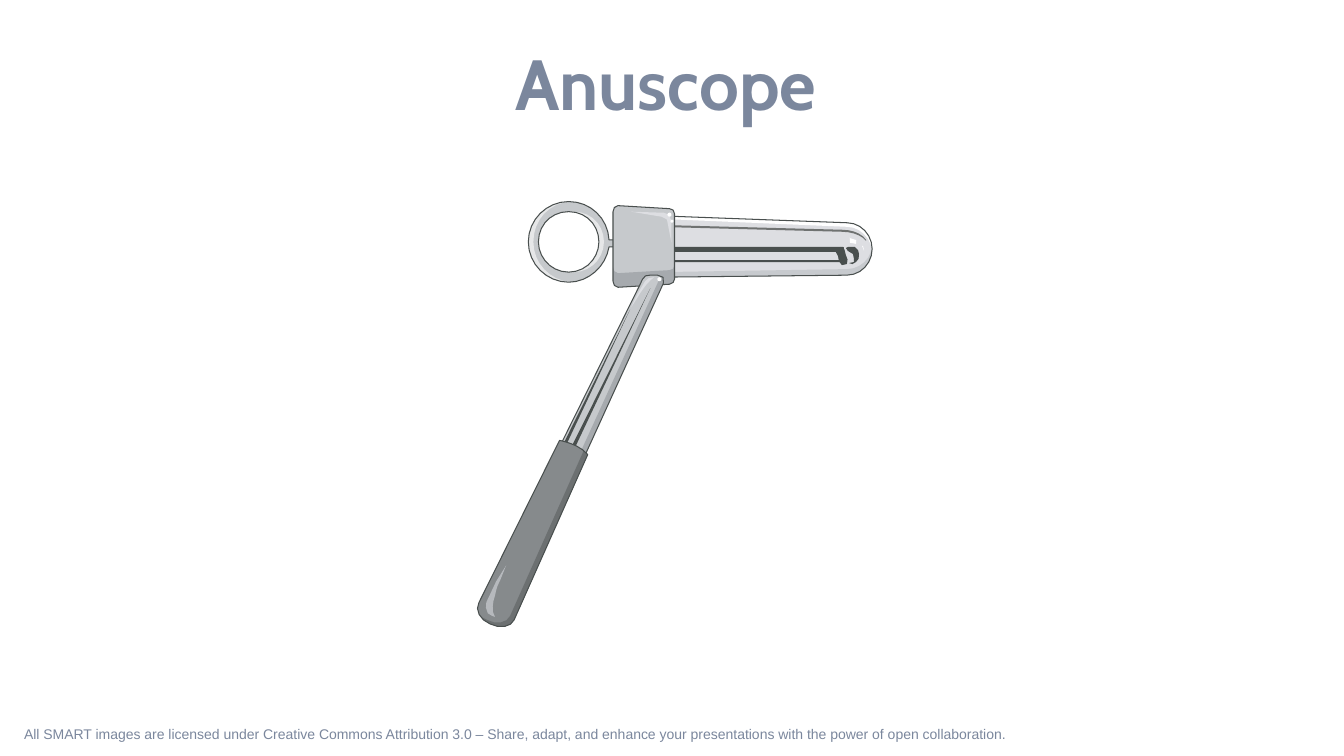
from math import ceil, dist

from pptx import Presentation
from pptx.dml.color import RGBColor
from pptx.enum.shapes import MSO_SHAPE as Preset
from pptx.enum.text import MSO_ANCHOR as Anchor, PP_ALIGN as Align
from pptx.util import Inches, Pt

SLATE = RGBColor(0x7B, 0x87, 0x9D)
WHITE = RGBColor(0xFF, 0xFF, 0xFF)
PEARL = RGBColor(0xDD, 0xDE, 0xE2)
MIST = RGBColor(0xE6, 0xE7, 0xE8)
STEEL = RGBColor(0xC6, 0xC9, 0xCC)
SILVER = RGBColor(0xC7, 0xCA, 0xCE)
SHADE = RGBColor(0xA6, 0xAA, 0xAE)
GLEAM = RGBColor(0xB6, 0xB9, 0xBD)
GREY = RGBColor(0x6F, 0x72, 0x71)
GRIP = RGBColor(0x86, 0x8A, 0x8C)
GRIP_SHADE = RGBColor(0x6C, 0x70, 0x71)
INK = RGBColor(0x49, 0x4F, 0x4E)

# Texts: box, wording, paragraph format, font format
TEXTS = [
    ((0.14, 7.18, 10.06, 0.24),
     "All SMART images are licensed under Creative Commons Attribution 3.0 – Share, adapt, "
     "and enhance your presentations with the power of open collaboration.",
     {"line_spacing": 0.8},
     {"name": "Arial", "size": Pt(10), "bold": False}),
    ((0.37, 0.08, 12.47, 1.46), "Anuscope", {"alignment": Align.CENTER},
     {"name": "Cabin", "size": Pt(50.7), "bold": True}),
]

# Outlines: contours of points; two numbers are a corner, six a curve
TUBE = [[(8.65, 2.47), (8.65, 2.61, 8.54, 2.73, 8.4, 2.73), (6.52, 2.75),
         (6.38, 2.75, 6.26, 2.62, 6.26, 2.44), (6.26, 2.27, 6.38, 2.14, 6.52, 2.14),
         (8.4, 2.21), (8.54, 2.21, 8.65, 2.33, 8.65, 2.47)]]
TUBE_TOP = [[(6.52, 2.17), (8.4, 2.25), (8.53, 2.25, 8.64, 2.36, 8.65, 2.49), (8.65, 2.47),
             (8.65, 2.33, 8.54, 2.21, 8.4, 2.21), (6.52, 2.14)]]
TUBE_BASE = [[(8.4, 2.67), (6.52, 2.7), (6.52, 2.75), (8.4, 2.73),
              (8.54, 2.73, 8.65, 2.61, 8.65, 2.47), (8.65, 2.44),
              (8.64, 2.57, 8.53, 2.67, 8.4, 2.67)]]
TUBE_EDGE = [[(6.47, 2.23), (6.47, 2.25), (8.35, 2.3), (8.46, 2.3, 8.55, 2.34, 8.59, 2.39),
              (8.59, 2.38), (8.55, 2.32, 8.46, 2.28, 8.35, 2.28)]]
HOOKS = [[(8.34, 2.45), (8.38, 2.44, 8.38, 2.5, 8.39, 2.53), (8.4, 2.55, 8.42, 2.6, 8.4, 2.62),
          (8.38, 2.63, 8.37, 2.63, 8.35, 2.63), (8.33, 2.63, 8.33, 2.61, 8.32, 2.59),
          (8.32, 2.56, 8.31, 2.52, 8.29, 2.5), (8.22, 2.48), (8.32, 2.47)],
         [(8.41, 2.45), (8.39, 2.46), (8.41, 2.49), (8.44, 2.5, 8.46, 2.5, 8.46, 2.52),
          (8.47, 2.54, 8.47, 2.58, 8.47, 2.6), (8.42, 2.61), (8.43, 2.63, 8.48, 2.62, 8.49, 2.6),
          (8.52, 2.59, 8.52, 2.55, 8.52, 2.52), (8.52, 2.5, 8.51, 2.46, 8.48, 2.45)]]
TIP_GLINTS = [[(8.42, 2.36), (8.45, 2.36, 8.56, 2.4, 8.49, 2.42), (8.46, 2.43, 8.38, 2.4, 8.43, 2.36)],
              [(8.56, 2.44), (8.57, 2.45, 8.57, 2.47, 8.57, 2.49), (8.54, 2.5, 8.53, 2.46, 8.55, 2.44)]]
RING = [[(6.13, 2.38), (6.04, 2.38), (6.03, 2.17, 5.86, 2, 5.64, 2),
         (5.42, 2, 5.24, 2.18, 5.24, 2.4), (5.24, 2.62, 5.42, 2.8, 5.64, 2.8),
         (5.84, 2.8, 6.01, 2.64, 6.04, 2.45), (6.13, 2.45)],
        [(5.64, 2.7), (5.47, 2.7, 5.34, 2.56, 5.34, 2.4), (5.34, 2.23, 5.47, 2.1, 5.64, 2.1),
         (5.81, 2.1, 5.94, 2.23, 5.94, 2.4), (5.94, 2.56, 5.81, 2.7, 5.64, 2.7)]]
RING_LIGHT = [[(5.66, 2), (5.64, 2), (5.42, 2, 5.24, 2.18, 5.24, 2.4),
               (5.24, 2.62, 5.42, 2.8, 5.64, 2.8), (5.66, 2.8),
               (5.45, 2.78, 5.29, 2.61, 5.29, 2.4), (5.29, 2.18, 5.45, 2.01, 5.66, 2)],
              [(5.69, 2.1), (5.66, 2.1), (5.82, 2.11, 5.94, 2.24, 5.94, 2.4),
               (5.94, 2.55, 5.82, 2.68, 5.66, 2.7), (5.69, 2.7),
               (5.86, 2.7, 5.99, 2.56, 5.99, 2.4), (5.99, 2.23, 5.86, 2.1, 5.69, 2.1)]]
COLLAR = [[(6.69, 2.77), (6.69, 2.79, 6.67, 2.82, 6.64, 2.82), (6.13, 2.85),
           (6.1, 2.85, 6.08, 2.82, 6.08, 2.79), (6.08, 2.1), (6.08, 2.07, 6.1, 2.04, 6.13, 2.04),
           (6.64, 2.07), (6.67, 2.07, 6.69, 2.09, 6.69, 2.12)]]
COLLAR_BASE = [[(6.64, 2.68), (6.13, 2.71), (6.1, 2.71, 6.08, 2.68, 6.08, 2.65), (6.08, 2.79),
                (6.08, 2.82, 6.1, 2.85, 6.13, 2.85), (6.64, 2.82),
                (6.67, 2.82, 6.69, 2.79, 6.69, 2.77), (6.69, 2.63),
                (6.69, 2.66, 6.67, 2.68, 6.64, 2.68)]]
COLLAR_GLINT = [[(6.26, 2.1), (6.56, 2.11), (6.56, 2.11, 6.66, 2.1, 6.66, 2.19), (6.66, 2.41),
                 (6.62, 2.2), (6.62, 2.2, 6.62, 2.15, 6.56, 2.15)]]
ROD = [[(6.52, 2.73), (6.57, 2.73, 6.6, 2.76, 6.58, 2.81), (5.56, 5.05), (5.24, 5.06),
        (6.35, 2.82), (6.37, 2.77, 6.39, 2.72, 6.45, 2.73)]]
ROD_SHADE = [[(6.54, 2.73), (6.55, 2.74, 6.55, 2.75, 6.54, 2.77), (5.5, 5.05), (5.56, 5.05),
              (6.58, 2.81), (6.6, 2.77, 6.58, 2.74, 6.54, 2.73)]]
ROD_GLINT = [[(6.49, 2.75), (6.42, 2.75, 6.4, 2.78, 6.37, 2.84),
              (6.33, 2.9, 6.29, 2.98, 6.26, 3.05), (6.33, 2.95, 6.39, 2.82, 6.49, 2.75)]]
ROD_GROOVES = [[(6.25, 3.07), (5.56, 4.46), (5.59, 4.47)],
               [(5.65, 4.47), (6.45, 2.86), (5.68, 4.49)]]
HANDLE = [[(5.83, 4.51), (5.1, 6.15), (5.07, 6.22, 4.96, 6.24, 4.86, 6.19),
           (4.76, 6.15, 4.71, 6.05, 4.75, 5.98), (5.55, 4.37), (5.55, 4.37, 5.74, 4.4, 5.83, 4.51)]]
HANDLE_SHADE = [[(5.79, 4.47), (5.06, 6.11), (5.03, 6.18, 4.92, 6.2, 4.83, 6.15),
                 (4.77, 6.12), (4.8, 6.15, 4.83, 6.18, 4.86, 6.19),
                 (4.96, 6.24, 5.07, 6.22, 5.1, 6.15), (5.83, 4.51)]]
HANDLE_GLINT = [[(4.88, 6.11), (4.85, 6.12, 4.82, 6.06, 4.82, 6.03), (4.81, 6, 4.83, 5.95, 4.85, 5.92),
                 (4.92, 5.77), (5.02, 5.61), (4.96, 5.76), (4.93, 5.81, 4.92, 5.86, 4.91, 5.91),
                 (4.89, 5.96, 4.87, 6.07, 4.91, 6.12)]]

# Parts from back to front: outline or (preset, box), fill, line
BAR, DOT = Preset.ROUNDED_RECTANGLE, Preset.OVAL
PARTS = [
    (TUBE, PEARL, None), (TUBE_TOP, WHITE, None), (TUBE_BASE, SILVER, None),
    (TUBE_EDGE, GREY, None), (TUBE, None, INK),
    ((BAR, (6.57, 2.45, 1.8, 0.05)), INK, None), (HOOKS, INK, None),
    ((BAR, (6.63, 2.58, 1.76, 0.02)), INK, None), (TIP_GLINTS, WHITE, None),
    (RING, STEEL, None), (RING_LIGHT, MIST, None), (RING, None, INK),
    (COLLAR, STEEL, None), (COLLAR_BASE, SHADE, None), (COLLAR, None, INK),
    (ROD, STEEL, None), (ROD_SHADE, SHADE, None), (ROD, None, INK),
    (COLLAR_GLINT, PEARL, None), ((DOT, (6.62, 2.11, 0.04, 0.04)), WHITE, None),
    ((DOT, (6.65, 2.18, 0.03, 0.03)), WHITE, None), (ROD_GROOVES, INK, None),
    (ROD_GLINT, PEARL, None), ((DOT, (6.52, 2.75, 0.04, 0.04)), WHITE, None),
    (HANDLE, GRIP, None), (HANDLE_SHADE, GRIP_SHADE, None),
    (HANDLE_GLINT, GLEAM, None), (HANDLE, None, INK),
]
STEPS_PER_INCH, MOST_STEPS = 16, 8


def trace(contour):
    """Turn corners and cubic curves into points; longer curves get more."""
    points = [contour[0]]
    for node in contour[1:]:
        start, end = points[-1], node[-2:]
        if len(node) == 6:
            steps = min(MOST_STEPS, ceil(dist(start, end) * STEPS_PER_INCH))
            for step in range(1, steps):
                t = step / steps
                weights = ((1 - t) ** 3, 3 * t * (1 - t) ** 2, 3 * t * t * (1 - t), t ** 3)
                points.append(tuple(sum(w * p for w, p in zip(weights, axis))
                                    for axis in zip(start, node[:2], node[2:4], end)))
        points.append(end)
    return [(Inches(x), Inches(y)) for x, y in points]


def draw_outline(shapes, contours):
    head, *others = [trace(contour) for contour in contours]
    builder = shapes.build_freeform(*head[0], scale=1.0)
    builder.add_line_segments(head[1:], close=True)
    for points in others:
        builder.move_to(*points[0])
        builder.add_line_segments(points[1:], close=True)
    return builder.convert_to_shape()


def draw_part(shapes, form, fill, line):
    if isinstance(form, tuple):
        preset, box = form
        shape = shapes.add_shape(preset, *map(Inches, box))
    else:
        shape = draw_outline(shapes, form)
    shape.shadow.inherit = False
    for paint, color in ((shape.fill, fill), (shape.line.fill, line)):
        if color is None:
            paint.background()
        else:
            paint.solid()
            paint.fore_color.rgb = color
    if line is not None:
        shape.line.width = Pt(0)


def add_text(page, box, wording, layout, font):
    frame = page.shapes.add_textbox(*map(Inches, box)).text_frame
    frame.word_wrap = True
    frame.vertical_anchor = Anchor.MIDDLE
    para = frame.paragraphs[0]
    span = para.add_run()
    span.text = wording
    for target, values in ((para, layout), (span.font, font)):
        for name, value in values.items():
            setattr(target, name, value)
    span.font.color.rgb = SLATE


def main():
    deck = Presentation()
    deck.slide_width, deck.slide_height = Inches(13.33), Inches(7.5)
    page = deck.slides.add_slide(deck.slide_layouts[6])
    for text in TEXTS:
        add_text(page, *text)
    anuscope = page.shapes.add_group_shape()
    for part in PARTS:
        draw_part(anuscope.shapes, *part)
    deck.save("out.pptx")


if __name__ == "__main__":
    main()
